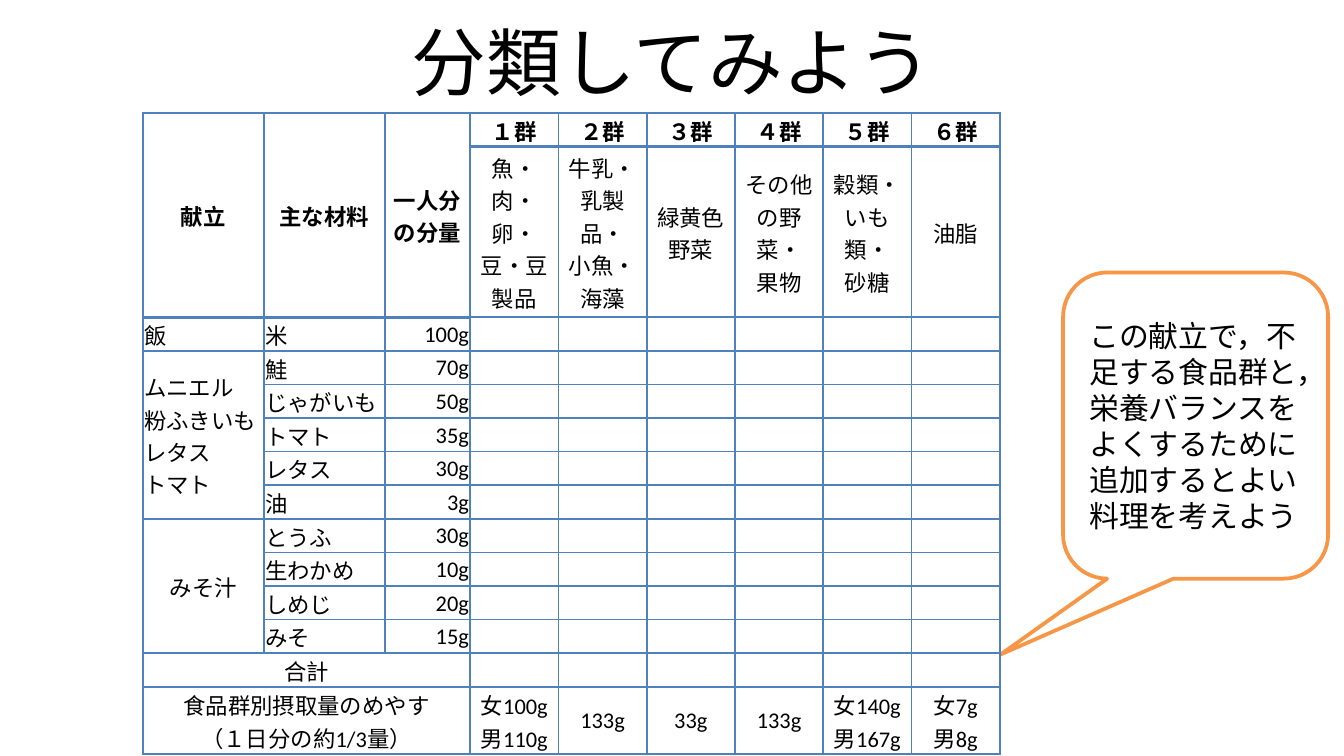
import pptx
import pptx.dml.color
import pptx.enum.shapes
import pptx.enum.text
import pptx.oxml
import pptx.oxml.ns
import pptx.util

Pt = pptx.util.Pt
ALIGN = pptx.enum.text.PP_ALIGN
MIDDLE = pptx.enum.text.MSO_ANCHOR.MIDDLE

# Content
TITLE = "分類してみよう"
ADVICE = "この献立で，不足する食品群と，栄養バランスをよくするために追加するとよい料理を考えよう"
HEADINGS = ["献立", "主な材料", "一人分\nの分量"]
FOOD_GROUPS = [
    # group, foods in it, recommended amount
    ("１群", "魚・肉・卵・\n豆・豆製品", "女100g\n男110g"),
    ("２群", "牛乳・乳製品・\n小魚・海藻", "133g"),
    ("３群", "緑黄色野菜", "33g"),
    ("４群", "その他の野菜・\n果物", "133g"),
    ("５群", "穀類・いも類・\n砂糖", "女140g\n男167g"),
    ("６群", "油脂", "女7g\n男8g"),
]
DISHES = [
    ("飯", ALIGN.LEFT, [("米", "100g")]),
    ("ムニエル\n粉ふきいも\nレタス\nトマト", ALIGN.LEFT,
     [("鮭", "70g"), ("じゃがいも", "50g"), ("トマト", "35g"),
      ("レタス", "30g"), ("油", "3g")]),
    ("みそ汁", ALIGN.CENTER,
     [("とうふ", "30g"), ("生わかめ", "10g"), ("しめじ", "20g"), ("みそ", "15g")]),
]
TOTAL = "合計"
GUIDELINE = "食品群別摂取量のめやす\n（１日分の約1/3量）"

THEME = {
    "font": "Calibri", "text": "000000", "paper": "FFFFFF",
    "grid": "4F81BD", "callout": "F79646",
    "title_size": 40, "advice_size": 16, "table_size": 12,
}

# Layout
SLIDE_SIZE = (720, 405)
TITLE_BOX = (36, -1.5, 648, 67.5)
CALLOUT_BOX = (569.5, 146, 142, 164)
CALLOUT_POINTER = (-0.736, 0.748, 0.167)
TABLE_CORNER = (76.5, 60.5)
COLUMNS = [64.8, 64.8, 45.8] + [47.3] * len(FOOD_GROUPS)
INGREDIENT_COUNT = sum(len(ingredients) for _, _, ingredients in DISHES)
ROWS = [18, 91.5] + [18] * (INGREDIENT_COUNT + 1) + [36]


def rgb(name):
    return pptx.dml.color.RGBColor.from_string(THEME[name])


def write(frame, text, size, align=ALIGN.CENTER, bold=False):
    paragraph = frame.paragraphs[0]
    paragraph.text = text
    paragraph.alignment = align
    for run in paragraph.runs:
        run.font.name = THEME["font"]
        run.font.size = Pt(size)
        run.font.bold = bold
        run.font.color.rgb = rgb("text")


def fill_cell(table, row, column, text, **style):
    write(table.cell(row, column).text_frame, text, THEME["table_size"], **style)


def draw_border(cell, thick_top, thick_bottom):
    """Grid lines come before the fill inside the cell properties."""
    properties = cell._tc.get_or_add_tcPr()
    widths = {"L": 1, "R": 1, "T": 1 + thick_top, "B": 1 + thick_bottom}
    for position, (side, width) in enumerate(widths.items()):
        properties.insert(position, pptx.oxml.parse_xml(
            f'<a:ln{side} {pptx.oxml.ns.nsdecls("a")} w="{Pt(width)}"><a:solidFill>'
            f'<a:srgbClr val="{THEME["grid"]}"/></a:solidFill></a:ln{side}>'))


def add_title(slide):
    frame = slide.shapes.add_textbox(*map(Pt, TITLE_BOX)).text_frame
    frame.word_wrap = True
    frame.vertical_anchor = MIDDLE
    write(frame, TITLE, THEME["title_size"])


def add_advice(slide):
    callout = slide.shapes.add_shape(
        pptx.enum.shapes.MSO_SHAPE.ROUNDED_RECTANGULAR_CALLOUT, *map(Pt, CALLOUT_BOX))
    for index, value in enumerate(CALLOUT_POINTER):
        callout.adjustments[index] = value
    callout.shadow.inherit = False
    callout.fill.solid()
    callout.fill.fore_color.rgb = rgb("paper")
    callout.line.color.rgb = rgb("callout")
    callout.line.width = Pt(2)
    callout.text_frame.word_wrap = True
    callout.text_frame.vertical_anchor = MIDDLE
    write(callout.text_frame, ADVICE, THEME["advice_size"], align=ALIGN.LEFT)


def add_menu_table(slide):
    table = slide.shapes.add_table(
        len(ROWS), len(COLUMNS), *map(Pt, TABLE_CORNER),
        Pt(sum(COLUMNS)), Pt(sum(ROWS))).table
    table.first_row = table.horz_banding = False
    for column, width in zip(table.columns, COLUMNS):
        column.width = Pt(width)
    for row, height in zip(table.rows, ROWS):
        row.height = Pt(height)

    # Every cell: margins, grid lines, and a small size for empty text
    first_group = len(HEADINGS)
    for r in range(len(ROWS)):
        for c in range(len(COLUMNS)):
            cell = table.cell(r, c)
            cell.margin_left = cell.margin_right = cell.margin_top = Pt(0.7)
            cell.margin_bottom = Pt(0)
            cell.vertical_anchor = MIDDLE
            cell.fill.background()
            head_end = 1 if c < first_group else 0
            draw_border(cell, r == head_end + 1, r == 0 or r == head_end)
            ending = cell.text_frame.paragraphs[0]._p.get_or_add_endParaRPr()
            ending.set("sz", str(THEME["table_size"] * 100))

    # Headings
    for c, heading in enumerate(HEADINGS):
        table.cell(0, c).merge(table.cell(1, c))
        fill_cell(table, 0, c, heading, bold=True)

    # Food groups and their recommended amounts
    last = len(ROWS) - 1
    for c, (group, foods, amount) in enumerate(FOOD_GROUPS, first_group):
        fill_cell(table, 0, c, group, bold=True)
        fill_cell(table, 1, c, foods)
        table.cell(1, c)._tc.get_or_add_tcPr().set("vert", "eaVert")
        fill_cell(table, last, c, amount)

    # Dishes and ingredients
    r = 2
    for dish, align, ingredients in DISHES:
        if len(ingredients) > 1:
            table.cell(r, 0).merge(table.cell(r + len(ingredients) - 1, 0))
        fill_cell(table, r, 0, dish, align=align)
        for ingredient, amount in ingredients:
            fill_cell(table, r, 1, ingredient, align=ALIGN.LEFT)
            fill_cell(table, r, 2, amount, align=ALIGN.RIGHT)
            r += 1

    # Summary rows
    for r, label in ((last - 1, TOTAL), (last, GUIDELINE)):
        table.cell(r, 0).merge(table.cell(r, first_group - 1))
        fill_cell(table, r, 0, label)


def main():
    deck = pptx.Presentation()
    deck.slide_width, deck.slide_height = map(Pt, SLIDE_SIZE)
    slide = deck.slides.add_slide(deck.slide_layouts[6])
    add_title(slide)
    add_advice(slide)
    add_menu_table(slide)
    deck.save("out.pptx")


if __name__ == "__main__":
    main()
